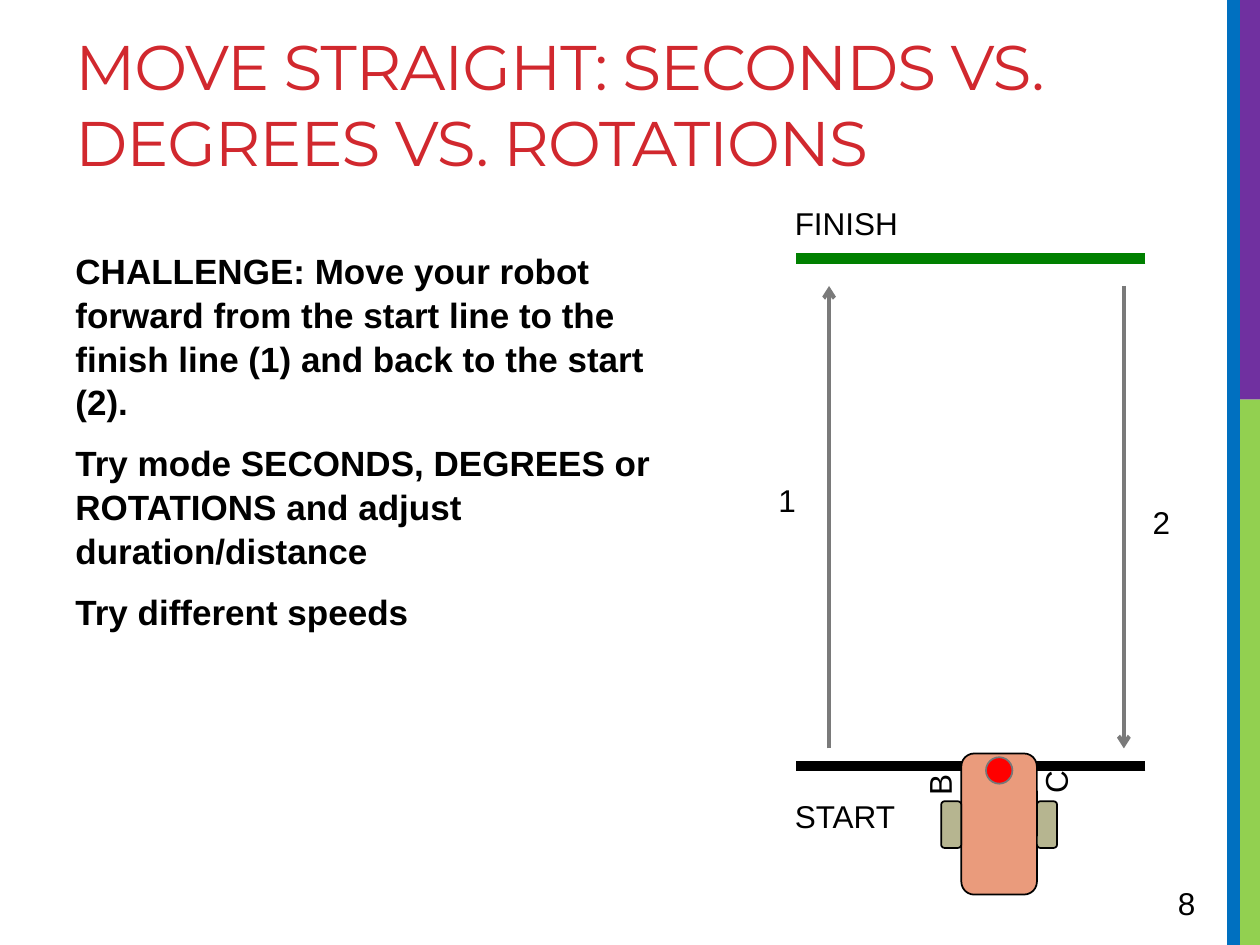
from lxml.etree import SubElement as Sub
from pptx import Presentation
from pptx.dml.color import RGBColor
from pptx.enum.shapes import MSO_CONNECTOR as Con, MSO_SHAPE as Geo
from pptx.enum.text import MSO_ANCHOR as Anchor, MSO_AUTO_SIZE as Auto
from pptx.oxml.ns import qn
from pptx.util import Inches, Pt

TITLE = "MOVE STRAIGHT: SECONDS VS. DEGREES VS. ROTATIONS"
BODY = [
    "CHALLENGE: Move your robot forward from the start line to the finish line (1) and back to the start (2).",
    "Try mode SECONDS, DEGREES or ROTATIONS and adjust duration/distance",
    "Try different speeds",
]
BARS = [
    ((9.84, 3.17, 0.16, 4.33), "92D050"),
    ((9.8, 0, 0.2, 3.17), "7030A0"),
    ((9.74, 0, 0.1, 7.5), "0070C0"),
]
LEFT, RIGHT = 6.32, 9.09
FAR, NEAR = 2.27, 5.94
TRACK = [(2.05, "008000"), (6.08, "000000")]
PATHS = [(6.58, NEAR, FAR), (8.92, FAR, NEAR)]
LABELS = [
    ("1", (6.08, 3.77, 0.34, 0.4), True),
    ("2", (9.05, 3.94, 0.34, 0.4), True),
    ("FINISH", (6.21, 1.57, 1.03, 0.4), False),
    ("START", (6.21, 6.28, 1, 0.4), False),
]
ROBOT = (7.63, 5.98, 0.6, 1.12)
WHEEL = (0.16, 0.37)
DOT = 0.21
PORTS = [("B", 7.18, 6.04), ("C", 8.1, 6.02)]


def color(code):
    return RGBColor.from_string(code)


def add_shape(shapes, geo, box, fill, edge=None):
    shape = shapes.add_shape(geo, *map(Inches, box))
    shape.shadow.inherit = False
    shape.fill.solid()
    shape.fill.fore_color.rgb = color(fill)
    if edge:
        shape.line.color.rgb = color(edge)
        shape.line.width = Pt(1)
    else:
        shape.line.fill.background()
    return shape


def add_line(shapes, start, end, code, width, arrow=False):
    line = shapes.add_connector(Con.STRAIGHT, *map(Inches, start + end))
    line.line.color.rgb = color(code)
    line.line.width = Pt(width)
    if arrow:
        Sub(line.line._get_or_add_ln(), qn("a:tailEnd"), type="arrow")
    Sub(line._element.spPr, qn("a:effectLst"))


def add_text(shapes, box, paras, size=18, code="000000", face="Arial",
             bold=False, wrap=True, grow=False):
    shape = shapes.add_textbox(*map(Inches, box))
    frame = shape.text_frame
    frame.word_wrap = wrap
    frame.auto_size = Auto.SHAPE_TO_FIT_TEXT if grow else Auto.NONE
    for num, text in enumerate(paras):
        para = frame.paragraphs[0] if num == 0 else frame.add_paragraph()
        run = para.add_run()
        run.text = text
        font = run.font
        font.size, font.name, font.bold = Pt(size), face, bold
        font.color.rgb = color(code)
    return shape


def add_robot(slide):
    shapes = slide.shapes.add_group_shape().shapes
    left, top, width, height = ROBOT
    wide, tall = WHEEL
    body = add_shape(shapes, Geo.ROUNDED_RECTANGLE, ROBOT, "EA9B7C", "000000")
    body.adjustments[0] = 0.17
    for x in (left + width, left - wide):
        box = (x, top + (height - tall) / 3 + 0.13, wide, tall)
        add_shape(shapes, Geo.ROUNDED_RECTANGLE, box, "B6B590", "000000")
    box = (left + (width - DOT) / 2, top + 0.03, DOT, DOT)
    add_shape(shapes, Geo.OVAL, box, "FF0000", "777777")
    for name, x, y in PORTS:
        port = add_text(shapes, (x, y, 0.45, 0.3), [name], grow=True)
        port.rotation = 270


def main():
    deck = Presentation()
    deck.slide_width, deck.slide_height = Inches(10), Inches(7.5)
    slide = deck.slides.add_slide(deck.slide_layouts[6])
    shapes = slide.shapes

    for box, fill in BARS:
        add_shape(shapes, Geo.RECTANGLE, box, fill)

    title = add_text(shapes, (0.5, 0.17, 9.02, 1.5), [TITLE], 36, "D1282E", "Montserrat")
    title.text_frame.paragraphs[0].runs[0].font._element.set("spc", "-60")

    body = add_text(shapes, (0.5, 1.92, 4.98, 4.78), BODY, 20, bold=True)
    for para in body.text_frame.paragraphs:
        para.space_before, para.space_after = Pt(4), Pt(6)
        para.line_spacing = 1.04

    for y, code in TRACK:
        add_line(shapes, (RIGHT, y), (LEFT, y), code, 6)
    for x, start, end in PATHS:
        add_line(shapes, (x, start), (x, end), "7A7A7A", 2.25, True)
    for text, box, wrap in LABELS:
        add_text(shapes, box, [text], wrap=wrap, grow=True)

    add_robot(slide)
    page = add_text(shapes, (9.25, 6.97, 0.69, 0.4), ["8"])
    page.text_frame.vertical_anchor = Anchor.MIDDLE
    deck.save("out.pptx")


if __name__ == "__main__":
    main()
